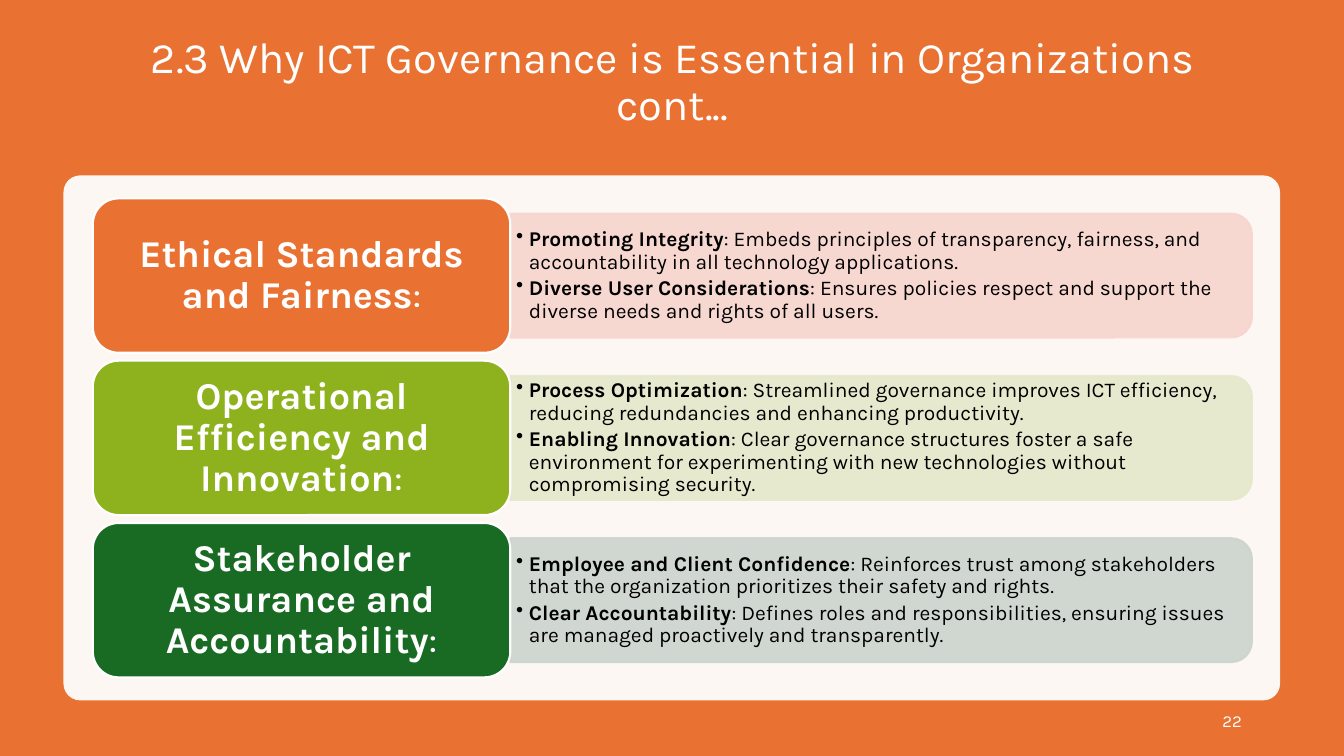
from lxml.etree import SubElement
from pptx import Presentation
from pptx.dml.color import RGBColor
from pptx.enum.shapes import MSO_SHAPE as Shape
from pptx.enum.text import MSO_ANCHOR as Anchor, MSO_AUTO_SIZE as AutoSize, PP_ALIGN as Align
from pptx.oxml.ns import qn
from pptx.util import Cm, Pt

ORANGE = RGBColor(0xE9, 0x71, 0x32)
LIME = RGBColor(0x8E, 0xB2, 0x1E)
GREEN = RGBColor(0x19, 0x6B, 0x24)
PALE_ORANGE = RGBColor(0xF7, 0xD5, 0xCE)
PALE_LIME = RGBColor(0xE5, 0xE8, 0xCA)
PALE_GREEN = RGBColor(0xCC, 0xD4, 0xCD)
WHITE = RGBColor(0xFF, 0xFF, 0xFF)
BLACK = RGBColor(0, 0, 0)

WIDTH, HEIGHT = 33.87, 19.05
ROW_TOP, ROW_PITCH = 5.0, 4.09
HEADING_LEFT, HEADING_WIDTH, HEADING_HEIGHT = 2.34, 10.52, 3.89
PANEL_LEFT, PANEL_WIDTH, PANEL_HEIGHT = 12.86, 18.69, 3.12
POINTS_WIDTH, POINTS_HEIGHT = 18.54, 2.82

THEMES = [
    ("Ethical Standards and Fairness", ORANGE, PALE_ORANGE, [
        ("Promoting Integrity", ": Embeds principles of transparency, fairness, and "
         "accountability in all technology applications."),
        ("Diverse User Considerations", ": Ensures policies respect and support the "
         "diverse needs and rights of all users."),
    ]),
    ("Operational Efficiency and Innovation", LIME, PALE_LIME, [
        ("Process Optimization", ": Streamlined governance improves ICT efficiency, "
         "reducing redundancies and enhancing productivity."),
        ("Enabling Innovation", ": Clear governance structures foster a safe environment "
         "for experimenting with new technologies without compromising security."),
    ]),
    ("Stakeholder Assurance and Accountability", GREEN, PALE_GREEN, [
        ("Employee and Client Confidence", ": Reinforces trust among stakeholders that "
         "the organization prioritizes their safety and rights."),
        ("Clear Accountability", ": Defines roles and responsibilities, ensuring issues "
         "are managed proactively and transparently."),
    ]),
]


class GovernanceSlide:
    font = "Karla"
    line_spacing = 0.9

    def __init__(self, deck):
        self.slide = deck.slides.add_slide(deck.slide_layouts[5])
        self.shapes = self.slide.shapes

    def style_run(self, run, size, color, bold=False):
        run.font.name = self.font
        run.font.size = Pt(size)
        run.font.color.rgb = color
        run.font.bold = bold

    def frame(self, shape, side=0.25, top=0.13, bottom=0.13):
        frame = shape.text_frame
        frame.word_wrap = True
        frame.auto_size = AutoSize.NONE
        frame.vertical_anchor = Anchor.MIDDLE
        frame.margin_left = frame.margin_right = Cm(side)
        frame.margin_top, frame.margin_bottom = Cm(top), Cm(bottom)
        return frame

    def label(self, paragraph, parts, size, color, align):
        paragraph.alignment = align
        paragraph.line_spacing = self.line_spacing
        for text, bold in parts:
            run = paragraph.add_run()
            run.text = text
            self.style_run(run, size, color, bold)

    def block(self, kind, left, top, width, height, fill, line=None, opacity=100):
        shape = self.shapes.add_shape(kind, Cm(left), Cm(top), Cm(width), Cm(height))
        shape.shadow.inherit = False
        shape.fill.solid()
        shape.fill.fore_color.rgb = fill
        if line is None:
            shape.line.fill.background()
        else:
            shape.line.color.rgb = line
            shape.line.width = Pt(1.5)
        if opacity < 100:
            for color in shape._element.spPr.iter(qn("a:srgbClr")):
                SubElement(color, qn("a:alpha"), val=str(opacity * 1000))
        return shape

    def backdrop(self):
        backdrop = self.block(Shape.RECTANGLE, 0, 0, WIDTH, HEIGHT, ORANGE)
        self.shapes._spTree.insert(2, backdrop._element)
        card = self.block(Shape.ROUNDED_RECTANGLE, 1.6, 4.42, 30.66, 13.23, WHITE, opacity=95)
        card.adjustments[0] = 0.032

    def title(self, text):
        title = self.shapes.title
        title.left, title.top, title.width, title.height = Cm(2.34), Cm(1.27), Cm(29.21), Cm(2.79)
        frame = self.frame(title, bottom=1.3)
        self.label(frame.paragraphs[0], [(text, False)], 31, WHITE, Align.CENTER)

    def page_number(self, number):
        box = self.shapes.add_textbox(Cm(23.93), Cm(17.65), Cm(7.62), Cm(1.02))
        paragraph = self.frame(box).paragraphs[0]
        paragraph.text = number
        paragraph.alignment = Align.RIGHT
        paragraph.space_after = Pt(6)
        self.style_run(paragraph.runs[0], 12, WHITE)

    def panel(self, middle, fill):
        center = PANEL_LEFT + PANEL_WIDTH / 2
        panel = self.block(Shape.ROUND_2_SAME_RECTANGLE, center - PANEL_HEIGHT / 2,
                           middle - PANEL_WIDTH / 2, PANEL_HEIGHT, PANEL_WIDTH,
                           fill, line=fill, opacity=90)
        panel.rotation = 90

    def points(self, middle, points):
        box = self.shapes.add_textbox(Cm(PANEL_LEFT), Cm(middle - POINTS_HEIGHT / 2),
                                      Cm(POINTS_WIDTH), Cm(POINTS_HEIGHT))
        frame = self.frame(box, 0.15, 0.08, 0.08)
        for index, (lead, detail) in enumerate(points):
            paragraph = frame.add_paragraph() if index else frame.paragraphs[0]
            self.label(paragraph, [(lead, True), (detail, False)], 15, BLACK, Align.LEFT)
            paragraph.space_after = Pt(2.5)
            properties = paragraph._p.get_or_add_pPr()
            indent = Cm(0.32)
            properties.set("marL", str(indent))
            properties.set("indent", str(-indent))
            SubElement(properties, qn("a:buChar"), char="•")

    def heading(self, top, text, fill):
        heading = self.block(Shape.ROUNDED_RECTANGLE, HEADING_LEFT, top, HEADING_WIDTH,
                             HEADING_HEIGHT, fill, line=WHITE)
        frame = self.frame(heading, 0.46, 0.34, 0.34)
        self.label(frame.paragraphs[0], [(text, True), (":", False)], 27, WHITE, Align.CENTER)


def main():
    deck = Presentation()
    deck.slide_width, deck.slide_height = Cm(WIDTH), Cm(HEIGHT)
    page = GovernanceSlide(deck)
    page.backdrop()
    page.title("2.3 Why ICT Governance is Essential in Organizations cont...")
    page.page_number("22")
    for row, (heading, strong, pale, points) in enumerate(THEMES):
        top = ROW_TOP + row * ROW_PITCH
        middle = top + HEADING_HEIGHT / 2
        page.panel(middle, pale)
        page.points(middle, points)
        page.heading(top, heading, strong)
    deck.save("out.pptx")


if __name__ == "__main__":
    main()
